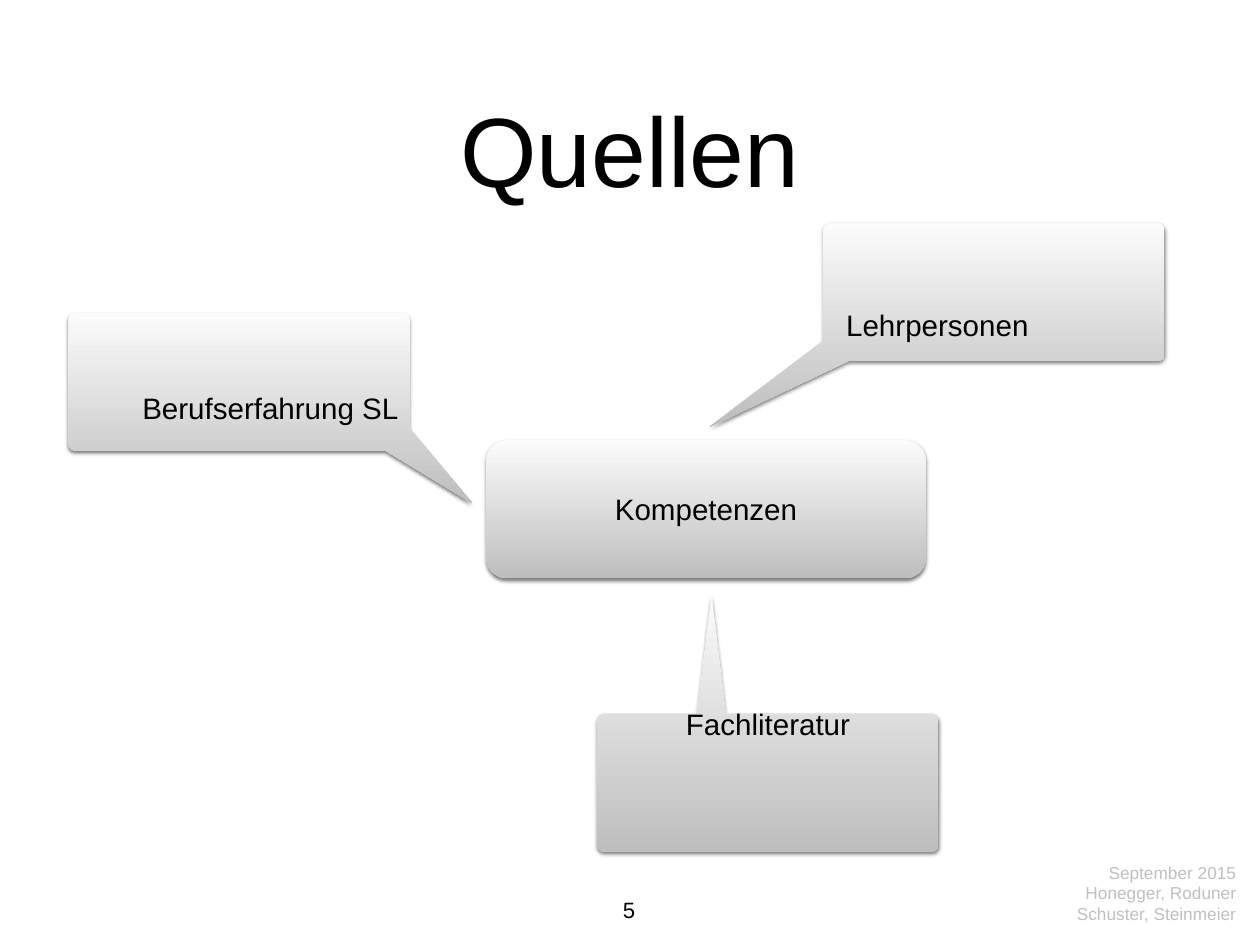
"""Builds the slide "Quellen": three sources pointing at the competences."""
from math import cos, radians, sin

from lxml import etree
from pptx import Presentation
from pptx.dml.color import RGBColor
from pptx.enum.shapes import MSO_SHAPE
from pptx.enum.text import MSO_ANCHOR, PP_ALIGN
from pptx.oxml import parse_xml
from pptx.util import Cm, Pt

CENTER, RIGHT = PP_ALIGN.CENTER, PP_ALIGN.RIGHT
TOP, MIDDLE = MSO_ANCHOR.TOP, MSO_ANCHOR.MIDDLE
ROUNDED = MSO_SHAPE.ROUNDED_RECTANGLE
SHADOW = (
    '<a:outerShdw xmlns:a="http://schemas.openxmlformats.org/drawingml/2006/main" '
    'blurRad="38100" dist="25400" dir="5400000" rotWithShape="0">'
    '<a:srgbClr val="000000"><a:alpha val="50000"/></a:srgbClr></a:outerShdw>'
)
BUBBLE_WIDTH, BUBBLE_HEIGHT, RADIUS = 9.79, 3.95, 0.2


def write(box, lines, size, color="000000", align=CENTER, anchor=MIDDLE, inset=0, wrap=True):
    frame = box.text_frame
    frame.word_wrap = wrap
    frame.vertical_anchor = anchor
    frame.margin_left = frame.margin_right = Cm(inset)
    frame.margin_top = frame.margin_bottom = Cm(inset)
    for number, line in enumerate(lines):
        para = frame.add_paragraph() if number else frame.paragraphs[0]
        para.alignment = align
        span = para.add_run()
        span.text = line
        span.font.name = "Arial"
        span.font.size = Pt(size)
        span.font.color.rgb = RGBColor.from_string(color)


def style(shape, label):
    shape.fill.gradient()
    shape.fill.gradient_angle = 270
    for stop, position, color in zip(shape.fill.gradient_stops, (0, 1), ("FBFBFB", "BEBEBE")):
        stop.position = position
        stop.color.rgb = RGBColor.from_string(color)
    shape.line.fill.background()
    shape.shadow.inherit = False
    effects = next(shape.element.spPr.iterchildren("{*}effectLst"))
    effects.append(parse_xml(SHADOW))
    write(shape, [label], 24, inset=0.15)


deck = Presentation()
deck.slide_width, deck.slide_height = Cm(36.12), Cm(27.1)
page = deck.slides.add_slide(deck.slide_layouts[6])

page_number = page.shapes.add_textbox(Cm(17.7), Cm(25.7), Cm(0.66), Cm(1.07))
write(page_number, ["5"], 18, anchor=TOP, wrap=False)

competences = page.shapes.add_shape(ROUNDED, Cm(13.94), Cm(12.62), Cm(12.6), Cm(3.96))
competences.adjustments[0] = 0.15
style(competences, "Kompetenzen")

# Each tail takes the place of the corners from first to last, clockwise from top left.
bubbles = [
    ("Lehrpersonen", 23.6, 6.4, 3, 4, [(24.33, 10.35), (20.35, 12.24), (23.6, 9.78)]),
    ("Fachliteratur", 17.12, 20.47, 1, 1, [(19.99, 20.47), (20.4, 17.07), (20.8, 20.47)]),
    ("Berufserfahrung SL", 1.96, 8.97, 2, 3, [(11.75, 12.29), (13.54, 14.43), (11.05, 12.92)]),
]
for label, left, top, first, last, tail in bubbles:
    near_x, far_x = left + RADIUS, left + BUBBLE_WIDTH - RADIUS
    near_y, far_y = top + RADIUS, top + BUBBLE_HEIGHT - RADIUS
    centers = [(near_x, near_y), (far_x, near_y), (far_x, far_y), (near_x, far_y)]
    corners = []
    for quarter, (x, y) in enumerate(centers):
        angles = [radians(180 + 90 * quarter + step) for step in range(0, 91, 15)]
        corners.append([(x + RADIUS * cos(a), y + RADIUS * sin(a)) for a in angles])
    corners[first:last] = [tail]
    outline = [(Cm(x), Cm(y)) for corner in corners for x, y in corner]
    builder = page.shapes.build_freeform(*outline[0])
    builder.add_line_segments(outline[1:], close=True)
    style(builder.convert_to_shape(), label)

title = page.shapes.add_textbox(Cm(2.64), Cm(1.24), Cm(30.84), Cm(6))
write(title, ["Quellen"], 80)

credits = page.shapes.add_textbox(Cm(28.4), Cm(24.26), Cm(7.04), Cm(2.7))
write(credits, ["September 2015", "Honegger, Roduner", "Schuster, Steinmeier"], 14, "C0C0C0", RIGHT)

deck.save("out.pptx")
